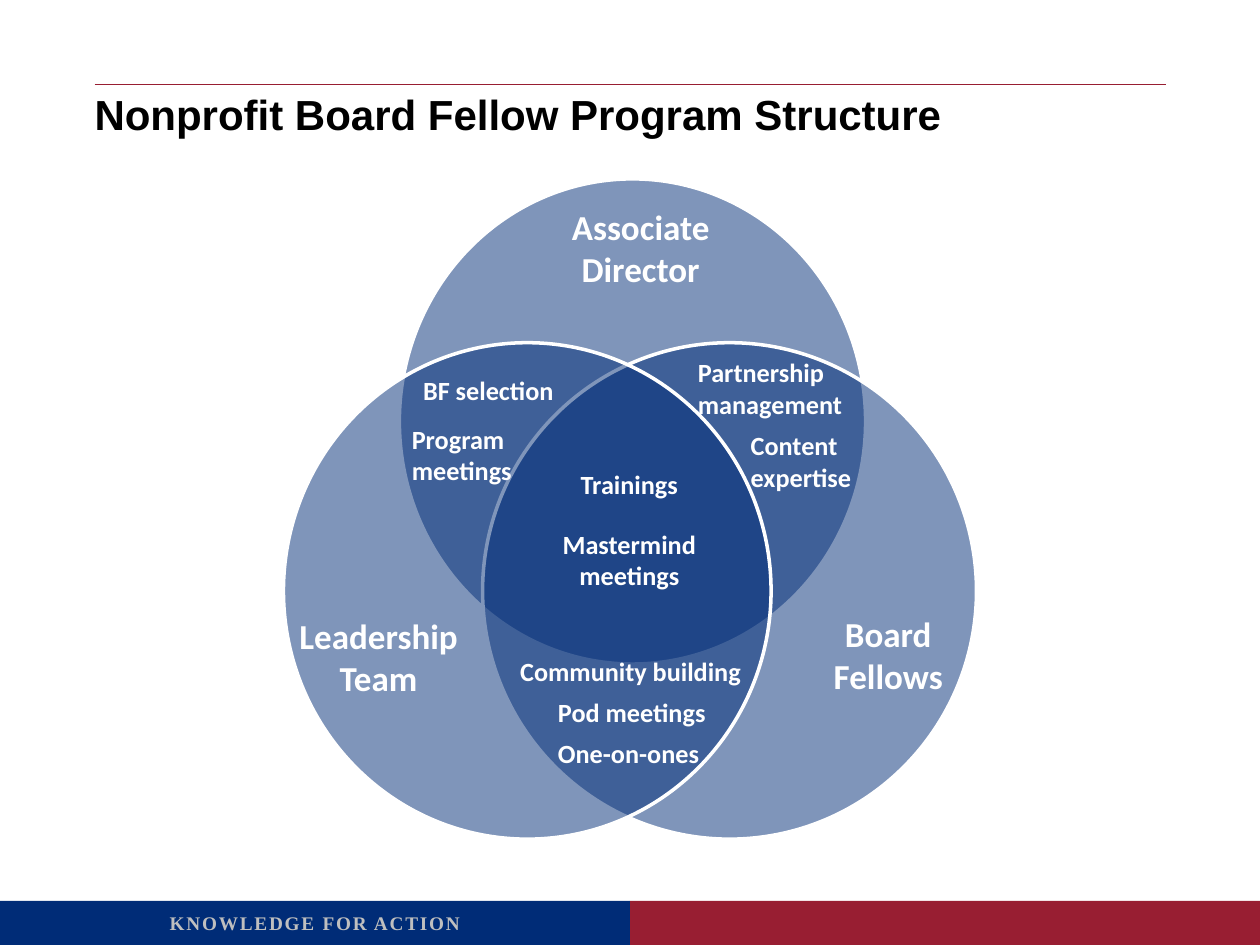
from lxml import etree
from pptx import Presentation
from pptx.dml.color import RGBColor
from pptx.enum.shapes import MSO_CONNECTOR as Conn, MSO_SHAPE as Shape
from pptx.enum.text import MSO_ANCHOR as Anchor, PP_ALIGN as Align
from pptx.oxml.ns import qn
from pptx.util import Inches, Pt

NAVY, RED, WHITE, GREY, BLACK = "002C77", "981E32", "FFFFFF", "BFBFBF", "000000"


def color(code):
    return RGBColor.from_string(code)


class Board:
    """Style and current slide, with one method per kind of element."""
    font = "Calibri"

    def __init__(self, deck):
        self.slide = deck.slides.add_slide(deck.slide_layouts[5])
        self.shapes = self.slide.shapes

    def put_text(self, frame, lines, size, font, ink, align):
        frame.word_wrap = True
        for i, line in enumerate(lines):
            para = frame.paragraphs[0] if i == 0 else frame.add_paragraph()
            para.alignment = align
            run = para.add_run()
            run.text = line
            run.font.size, run.font.name, run.font.bold = Pt(size), font, True
            run.font.color.rgb = color(ink)

    def title(self, text, box):
        item = self.shapes.title
        item.left, item.top, item.width, item.height = map(Inches, box)
        frame = item.text_frame
        frame.margin_left = frame.margin_right = 0
        frame.margin_top = frame.margin_bottom = 0
        frame.vertical_anchor = Anchor.TOP
        self.put_text(frame, [text], 24, "Arial", BLACK, Align.LEFT)

    def form(self, kind, box, fill, edge=None, alpha=None):
        item = self.shapes.add_shape(kind, *map(Inches, box))
        item.shadow.inherit = False
        item.fill.solid()
        item.fill.fore_color.rgb = color(fill)
        if alpha:
            tint = item._element.spPr.find(qn("a:solidFill")).find(qn("a:srgbClr"))
            etree.SubElement(tint, qn("a:alpha"), val=str(alpha * 1000))
        if edge:
            item.line.color.rgb = color(edge)
            item.line.width = Pt(2)
        else:
            item.line.fill.background()

    def rule(self, left, right, top):
        line = self.shapes.add_connector(
            Conn.STRAIGHT, *map(Inches, (left, top, right, top)))
        line.line.color.rgb = color(RED)
        line.line.width = Pt(0.5)
        etree.SubElement(line._element.spPr, qn("a:effectLst"))

    def label(self, box, lines, size=15, align=Align.CENTER, ink=WHITE, font=font):
        item = self.shapes.add_textbox(*map(Inches, box))
        self.put_text(item.text_frame, lines, size, font, ink, align)
        return item


def main():
    deck = Presentation()
    deck.slide_width, deck.slide_height = Inches(10), Inches(7.5)
    board = Board(deck)

    # Footer bands and motto
    for left, fill in ((5, RED), (0, NAVY)):
        board.form(Shape.RECTANGLE, (left, 7.15, 5, 0.35), fill)
    motto = board.label((0, 7.18, 5, 0.29), ["KNOWLEDGE FOR ACTION"], 11,
                        ink=GREY, font="Times New Roman")
    motto.text_frame.paragraphs[0].runs[0].font._element.set("spc", "100")

    # Heading
    board.rule(0.75, 9.25, 0.67)
    board.title("Nonprofit Board Fellow Program Structure", (0.75, 0.7, 8.5, 0.83))

    # Overlapping circles
    for box in ((3.17, 1.42, 3.7, 3.85), (3.83, 2.72, 3.92, 3.94),
                (2.25, 2.72, 3.87, 3.94)):
        board.form(Shape.OVAL, box, NAVY, WHITE, 50)

    # Group names
    for left, top, width, name in (
            (4, 1.58, 2.17, "Associate Director"),
            (2.17, 4.83, 1.67, "Leadership Team"),
            (6.35, 4.81, 1.4, "Board Fellows")):
        board.label((left, top, width, 0.77), name.split(), 20)

    # Shared tasks: height follows the number of lines
    one, two = 0.35, 0.61
    for left, top, width, high, text, align in (
            (3.26, 2.92, 1.26, one, "BF selection", Align.LEFT),
            (3.17, 3.31, 1.16, two, "Program meetings", Align.LEFT),
            (4.33, 5.48, 1.59, one, "Pod meetings", Align.LEFT),
            (4.33, 5.8, 1.5, one, "One-on-ones", Align.LEFT),
            (3.92, 5.15, 2.17, one, "Community building", Align.CENTER),
            (5.86, 3.36, 1.14, two, "Content expertise", Align.LEFT),
            (5.44, 2.78, 1.39, two, "Partnership management", Align.LEFT),
            (4.33, 3.67, 1.33, one, "Trainings", Align.CENTER),
            (4.33, 4.14, 1.33, two, "Mastermind meetings", Align.CENTER)):
        board.label((left, top, width, high), [text], align=align)

    deck.save("out.pptx")


if __name__ == "__main__":
    main()
